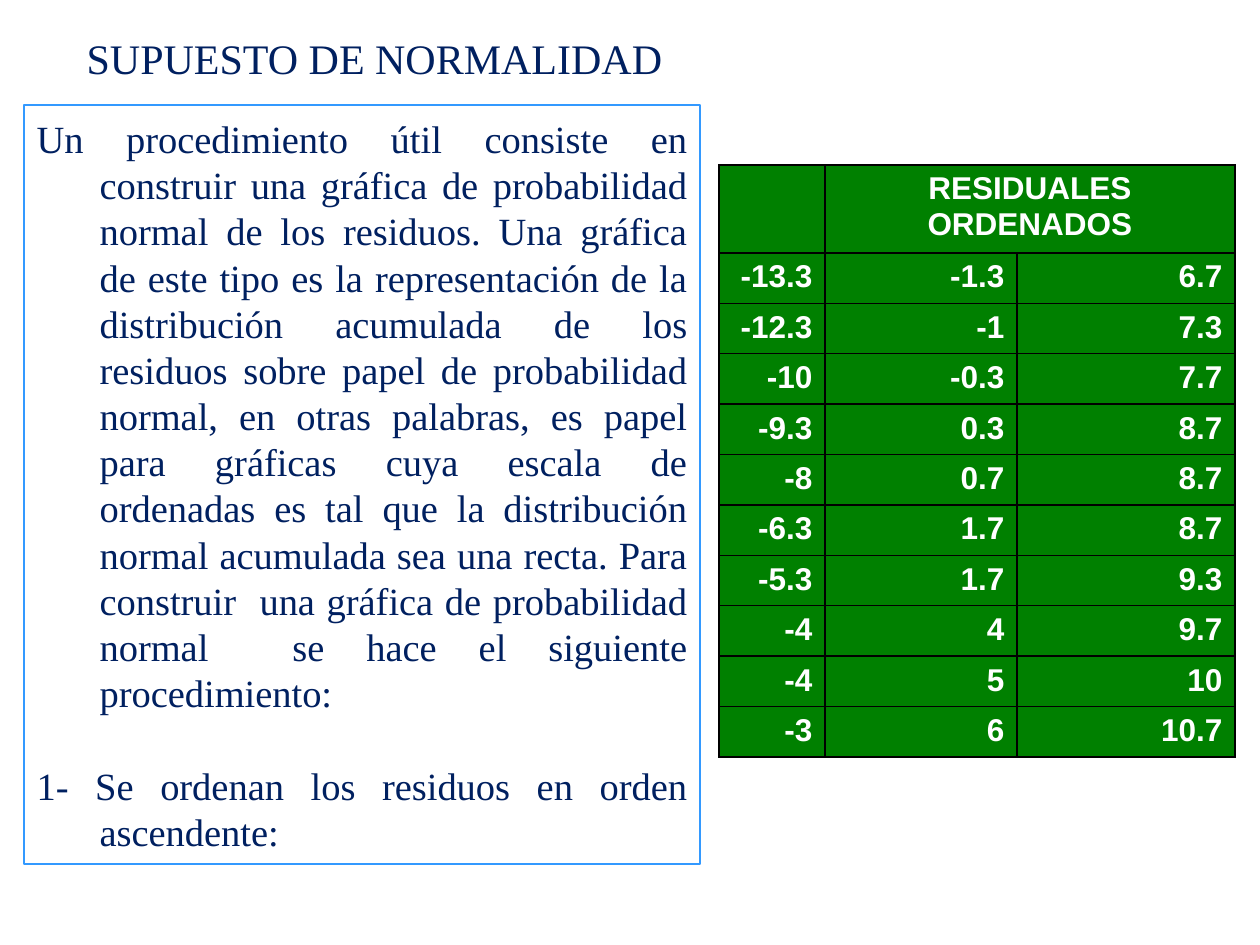
from lxml.etree import SubElement
from pptx import Presentation
from pptx.dml.color import RGBColor
from pptx.enum.text import MSO_ANCHOR, MSO_AUTO_SIZE, PP_ALIGN
from pptx.oxml.ns import qn
from pptx.util import Emu, Pt

# Content
TITLE = "SUPUESTO DE NORMALIDAD"
PARAGRAPHS = [
    "Un procedimiento útil consiste en construir una gráfica de probabilidad "
    "normal de los residuos. Una gráfica de este tipo es la representación de "
    "la distribución acumulada de los residuos sobre papel de probabilidad "
    "normal, en otras palabras, es papel para gráficas cuya escala de "
    "ordenadas es tal que la distribución normal acumulada sea una recta. "
    "Para construir  una gráfica de probabilidad normal  se hace el "
    "siguiente procedimiento:",
    "1- Se ordenan los residuos en orden ascendente:",
]
TABLE_HEADER = "RESIDUALES ORDENADOS"
RESIDUALS = [
    ("-13.3", "-1.3", "6.7"),
    ("-12.3", "-1", "7.3"),
    ("-10", "-0.3", "7.7"),
    ("-9.3", "0.3", "8.7"),
    ("-8", "0.7", "8.7"),
    ("-6.3", "1.7", "8.7"),
    ("-5.3", "1.7", "9.3"),
    ("-4", "4", "9.7"),
    ("-4", "5", "10"),
    ("-3", "6", "10.7"),
]

# Layout in px
TITLE_BOX = (74, 26, 625, 63)
BODY_BOX = (24, 105, 676, 759)
TABLE_LEFT, TABLE_TOP = 719, 165
COLUMN_WIDTHS = (106, 192, 218)
HEADER_HEIGHT, TABLE_HEIGHT = 88, 592
HANGING_INDENT = 63
LINE_PITCH = Pt(26.4)

COLORS = {"text": "002060", "outline": "3399FF", "cell": "008000",
          "cell_text": "FFFFFF", "border": "000000"}


def px(length):
    return Emu(round(length * 914400 / 126))


def color(name):
    return RGBColor.from_string(COLORS[name])


def style_runs(para, font_name, size, color_name, bold=False):
    for span in para.runs:
        span.font.name = font_name
        span.font.size = Pt(size)
        span.font.bold = bold
        span.font.color.rgb = color(color_name)


def place(box, bounds, anchor):
    box.left, box.top, box.width, box.height = map(px, bounds)
    frame = box.text_frame
    frame.word_wrap = True
    frame.auto_size = MSO_AUTO_SIZE.NONE
    frame.vertical_anchor = anchor
    return frame


def border_cell(cell):
    properties = cell._tc.get_or_add_tcPr()
    for index, side in enumerate(("lnL", "lnR", "lnT", "lnB")):
        line = properties.makeelement(qn(f"a:{side}"), {"w": str(Pt(1))})
        fill = SubElement(line, qn("a:solidFill"))
        SubElement(fill, qn("a:srgbClr"), val=COLORS["border"])
        properties.insert(index, line)


def add_title(slide):
    frame = place(slide.shapes.title, TITLE_BOX, MSO_ANCHOR.TOP)
    frame.text = TITLE
    para = frame.paragraphs[0]
    para.alignment = PP_ALIGN.LEFT
    style_runs(para, "Times New Roman", 24, "text")


def add_body(slide):
    box = slide.placeholders[1]
    frame = place(box, BODY_BOX, MSO_ANCHOR.MIDDLE)
    box.line.color.rgb = color("outline")
    box.line.width = Pt(0.75)
    frame.text = "\n".join(PARAGRAPHS)
    for index, para in enumerate(frame.paragraphs):
        para.alignment = PP_ALIGN.JUSTIFY
        para.line_spacing = LINE_PITCH
        para.space_before = LINE_PITCH if index else Pt(0)
        properties = para._p.get_or_add_pPr()
        properties.set("marL", str(px(HANGING_INDENT)))
        properties.set("indent", str(-px(HANGING_INDENT)))
        SubElement(properties, qn("a:buNone"))
        style_runs(para, "Times New Roman", 22, "text")


def add_residual_table(slide):
    rows = [("", TABLE_HEADER, "")] + RESIDUALS
    table = slide.shapes.add_table(
        len(rows), len(COLUMN_WIDTHS), px(TABLE_LEFT), px(TABLE_TOP),
        px(sum(COLUMN_WIDTHS)), px(TABLE_HEIGHT)).table
    for column, width in zip(table.columns, COLUMN_WIDTHS):
        column.width = px(width)
    row_height = (TABLE_HEIGHT - HEADER_HEIGHT) / len(RESIDUALS)
    for row_index, values in enumerate(rows):
        table.rows[row_index].height = px(row_height if row_index else HEADER_HEIGHT)
        for column_index, value in enumerate(values):
            cell = table.cell(row_index, column_index)
            cell.text = value
            cell.fill.solid()
            cell.fill.fore_color.rgb = color("cell")
            border_cell(cell)
            para = cell.text_frame.paragraphs[0]
            para.alignment = PP_ALIGN.RIGHT if row_index else PP_ALIGN.CENTER
            style_runs(para, "Arial", 18, "cell_text", bold=True)
    table.cell(0, 1).merge(table.cell(0, 2))


def main():
    deck = Presentation()
    deck.slide_width, deck.slide_height = px(1260), px(945)
    slide = deck.slides.add_slide(deck.slide_layouts[1])
    add_title(slide)
    add_body(slide)
    add_residual_table(slide)
    deck.save("out.pptx")


if __name__ == "__main__":
    main()
